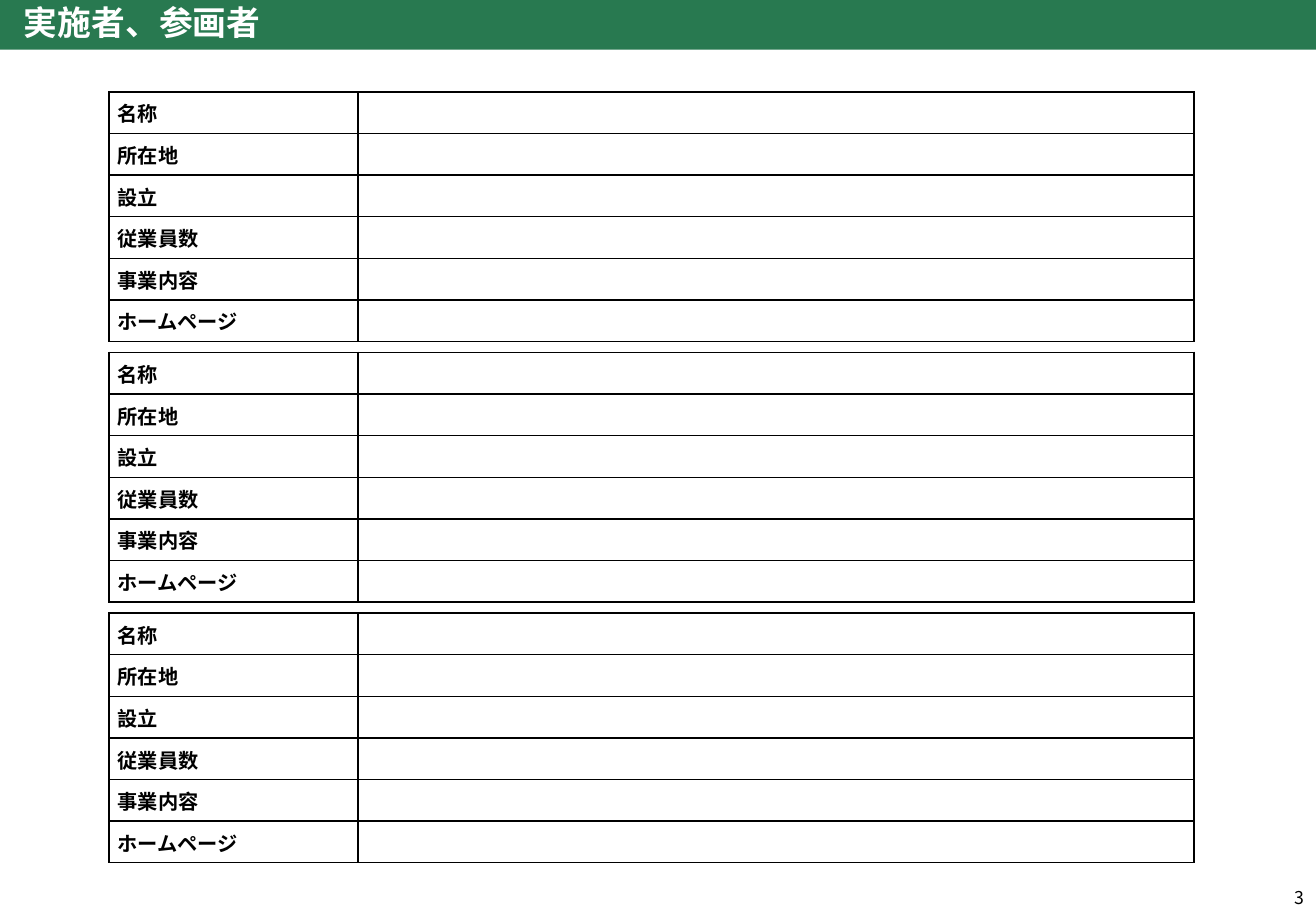
from dataclasses import dataclass

from lxml import etree
from pptx import Presentation
from pptx.dml.color import RGBColor
from pptx.enum.text import MSO_ANCHOR, MSO_AUTO_SIZE, PP_ALIGN
from pptx.oxml.ns import qn
from pptx.util import Cm, Pt

MIDDLE = MSO_ANCHOR.MIDDLE
NO_AUTOFIT = MSO_AUTO_SIZE.NONE
LEFT, RIGHT, JUSTIFY = PP_ALIGN.LEFT, PP_ALIGN.RIGHT, PP_ALIGN.JUSTIFY

FONT = "Noto Sans CJK JP"
GREEN, WHITE, BLACK = "287950", "FFFFFF", "000000"

SLIDE_WIDTH, SLIDE_HEIGHT = Cm(27.51), Cm(19.05)
TABLE_LEFT, FIRST_TABLE_TOP, TABLE_PITCH = Cm(2.28), Cm(1.92), Cm(5.45)
LABEL_WIDTH, VALUE_WIDTH, ROW_HEIGHT = Cm(5.2), Cm(17.48), Cm(0.87)
TABLE_COUNT = 3
CELL_MARGIN, HANGING_INDENT = Cm(0.18), Cm(0.38)


@dataclass(frozen=True)
class ProfileItem:
    label: str
    alignment: PP_ALIGN = JUSTIFY


PROFILE_ITEMS = [
    ProfileItem("名称"),
    ProfileItem("所在地", LEFT),
    ProfileItem("設立"),
    ProfileItem("従業員数"),
    ProfileItem("事業内容"),
    ProfileItem("ホームページ"),
]


def fill_solid(target, color: str) -> None:
    target.fill.solid()
    target.fill.fore_color.rgb = RGBColor.from_string(color)


def add_run(paragraph, text: str, size: float, color: str, bold: bool = False) -> None:
    run = paragraph.add_run()
    run.text = text
    run.font.size = Pt(size)
    run.font.bold = bold
    run.font.name = FONT
    run.font.color.rgb = RGBColor.from_string(color)
    east_asian = etree.SubElement(run.font._element, qn("a:ea"))
    east_asian.set("typeface", FONT)


def format_cell(cell) -> None:
    """Give a cell thin black borders, a white fill and tight margins."""
    properties = cell._tc.get_or_add_tcPr()
    for side in ("a:lnL", "a:lnR", "a:lnT", "a:lnB"):
        line = etree.SubElement(properties, qn(side), w=str(Pt(1)))
        line_fill = etree.SubElement(line, qn("a:solidFill"))
        etree.SubElement(line_fill, qn("a:srgbClr"), val=BLACK)
    fill_solid(cell, WHITE)
    cell.vertical_anchor = MIDDLE
    cell.margin_left = cell.margin_right = CELL_MARGIN
    cell.margin_top = cell.margin_bottom = 0


def write_label(cell, item: ProfileItem) -> None:
    paragraph = cell.text_frame.paragraphs[0]
    paragraph.alignment = item.alignment
    paragraph.line_spacing = Pt(18)
    properties = paragraph._p.get_or_add_pPr()
    properties.set("marL", str(HANGING_INDENT))
    properties.set("indent", str(-HANGING_INDENT))
    add_run(paragraph, item.label, 12, BLACK, bold=True)


def keep_empty_cell_small(cell) -> None:
    """Set the text size of an empty cell so that its row does not grow."""
    paragraph = cell.text_frame.paragraphs[0]
    etree.SubElement(paragraph._p, qn("a:endParaRPr"), sz="1200")


def add_profile_table(slide, top: int) -> None:
    table = slide.shapes.add_table(
        len(PROFILE_ITEMS), 2, TABLE_LEFT, top,
        LABEL_WIDTH + VALUE_WIDTH, ROW_HEIGHT * len(PROFILE_ITEMS),
    ).table
    table.first_row = table.horz_banding = False
    table.columns[0].width = LABEL_WIDTH
    table.columns[1].width = VALUE_WIDTH
    for row, item in zip(table.rows, PROFILE_ITEMS):
        row.height = ROW_HEIGHT
        label_cell, value_cell = row.cells
        format_cell(label_cell)
        format_cell(value_cell)
        write_label(label_cell, item)
        keep_empty_cell_small(value_cell)


def format_title(title, text: str) -> None:
    title.left, title.top = 0, 0
    title.width, title.height = SLIDE_WIDTH, Cm(1.04)
    fill_solid(title, GREEN)
    frame = title.text_frame
    frame.auto_size = NO_AUTOFIT
    frame.word_wrap = True
    frame.vertical_anchor = MIDDLE
    frame.margin_left, frame.margin_right = Cm(0.5), Cm(0.25)
    frame.margin_top = frame.margin_bottom = Cm(0.13)
    paragraph = frame.paragraphs[0]
    paragraph.alignment = LEFT
    paragraph.line_spacing = 0.9
    add_run(paragraph, text, 20, WHITE, bold=True)


def add_page_number(slide, number: str) -> None:
    width, height = Cm(2.18), Cm(0.56)
    box = slide.shapes.add_textbox(
        SLIDE_WIDTH - width, SLIDE_HEIGHT - height, width, height
    )
    frame = box.text_frame
    frame.word_wrap = True
    frame.vertical_anchor = MIDDLE
    paragraph = frame.paragraphs[0]
    paragraph.alignment = RIGHT
    add_run(paragraph, number, 10.5, BLACK)


def main() -> None:
    presentation = Presentation()
    presentation.slide_width = SLIDE_WIDTH
    presentation.slide_height = SLIDE_HEIGHT
    title_only = presentation.slide_layouts.get_by_name("Title Only")
    slide = presentation.slides.add_slide(title_only)
    format_title(slide.shapes.title, "実施者、参画者")
    add_page_number(slide, "3")
    for index in range(TABLE_COUNT):
        add_profile_table(slide, FIRST_TABLE_TOP + index * TABLE_PITCH)
    presentation.save("out.pptx")


if __name__ == "__main__":
    main()
